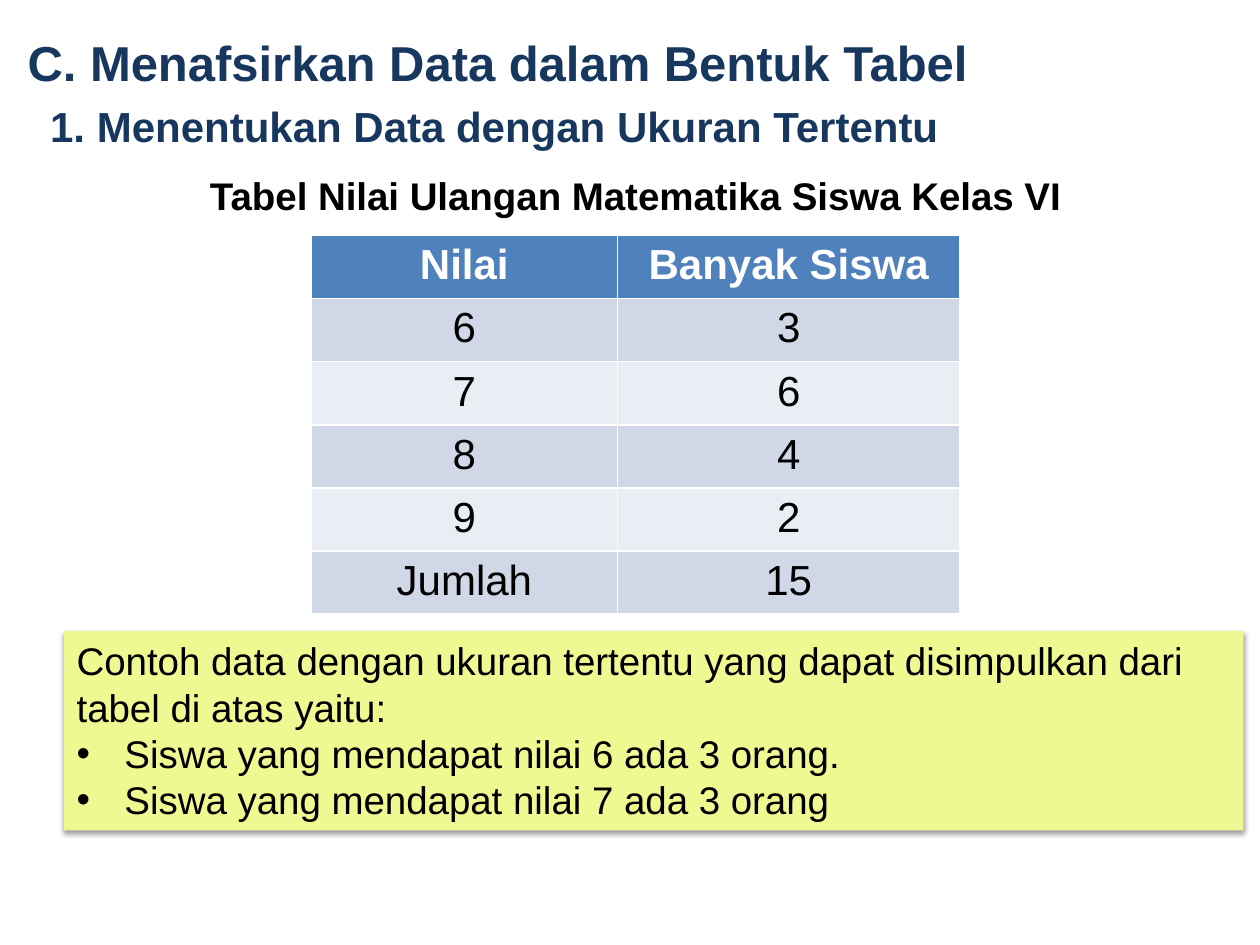
from lxml import etree
from pptx import Presentation
from pptx.dml.color import RGBColor
from pptx.enum.shapes import MSO_SHAPE as Shape
from pptx.enum.text import MSO_ANCHOR as Anchor, MSO_AUTO_SIZE as AutoSize, PP_ALIGN as Align
from pptx.oxml.ns import qn
from pptx.util import Inches, Pt

NAVY, BLACK, WHITE = "17375E", "000000", "FFFFFF"
HEADER, BANDS, LIME = "4F81BD", ("D0D8E8", "E9EDF4"), "EFF991"
SCORES = [
    ("Nilai", "Banyak Siswa"),
    ("6", "3"),
    ("7", "6"),
    ("8", "4"),
    ("9", "2"),
    ("Jumlah", "15"),
]
CONCLUSION = "Contoh data dengan ukuran tertentu yang dapat disimpulkan dari tabel di atas yaitu:"
EXAMPLES = [
    "Siswa yang mendapat nilai 6 ada 3 orang.",
    "Siswa yang mendapat nilai 7 ada 3 orang",
]


def paint(color_format, color):
    color_format.rgb = RGBColor.from_string(color)


def fill_solid(item, color):
    item.fill.solid()
    paint(item.fill.fore_color, color)


def write(paragraph, text, size, color=BLACK, bold=False, align=Align.LEFT):
    paragraph.alignment = align
    run = paragraph.add_run()
    run.text = text
    run.font.name = "Arial"
    run.font.size = Pt(size)
    run.font.bold = bold
    paint(run.font.color, color)


def indent(paragraph, left, first=0):
    properties = paragraph._p.get_or_add_pPr()
    properties.set("marL", str(Inches(left)))
    properties.set("indent", str(Inches(first)))
    return properties


def add_bullet(paragraph):
    properties = indent(paragraph, 0.38, -0.38)
    etree.SubElement(properties, qn("a:buFont"), typeface="Arial")
    etree.SubElement(properties, qn("a:buChar"), char="•")


def add_shadow(shape):
    effects = etree.SubElement(shape._element.spPr, qn("a:effectLst"))
    shadow = etree.SubElement(effects, qn("a:outerShdw"), blurRad=str(Pt(3.1)),
                              dist=str(Pt(1.6)), dir="5400000", rotWithShape="0")
    color = etree.SubElement(shadow, qn("a:srgbClr"), val=BLACK)
    etree.SubElement(color, qn("a:alpha"), val="38000")


def add_heading(slide, box, text, size, left_indent=0, wrap=True):
    frame = slide.shapes.add_textbox(*map(Inches, box)).text_frame
    frame.word_wrap = wrap
    frame.auto_size = AutoSize.SHAPE_TO_FIT_TEXT
    paragraph = frame.paragraphs[0]
    if left_indent:
        indent(paragraph, left_indent)
    write(paragraph, text, size, NAVY, True)


def add_panel(slide, box, color):
    shape = slide.shapes.add_shape(Shape.RECTANGLE, *map(Inches, box))
    fill_solid(shape, color)
    shape.line.fill.background()
    frame = shape.text_frame
    frame.word_wrap = True
    frame.auto_size = AutoSize.SHAPE_TO_FIT_TEXT
    frame.vertical_anchor = Anchor.TOP
    return shape


def add_caption(slide, box, text):
    shape = add_panel(slide, box, WHITE)
    shape.shadow.inherit = False
    write(shape.text_frame.paragraphs[0], text, 22, bold=True, align=Align.CENTER)


def add_conclusion(slide, box):
    shape = add_panel(slide, box, LIME)
    add_shadow(shape)
    frame = shape.text_frame
    write(frame.paragraphs[0], CONCLUSION, 22)
    for example in EXAMPLES:
        paragraph = frame.add_paragraph()
        add_bullet(paragraph)
        write(paragraph, example, 22)


def add_score_table(slide, box):
    table = slide.shapes.add_table(len(SCORES), 2, *map(Inches, box)).table
    for column, width in zip(table.columns, (2.43, 2.72)):
        column.width = Inches(width)
    for row, values in enumerate(SCORES):
        is_header = row == 0
        for column, value in enumerate(values):
            cell = table.cell(row, column)
            fill_solid(cell, HEADER if is_header else BANDS[(row - 1) % 2])
            write(cell.text_frame.paragraphs[0], value, 24,
                  WHITE if is_header else BLACK, is_header, Align.CENTER)


def main():
    presentation = Presentation()
    presentation.slide_width = Inches(10)
    presentation.slide_height = Inches(7.5)
    slide = presentation.slides.add_slide(presentation.slide_layouts[6])
    add_heading(slide, (0.12, 0.21, 8.39, 0.57), "C. Menafsirkan Data dalam Bentuk Tabel", 28)
    add_heading(slide, (0.12, 0.75, 7.5, 0.5), "1. Menentukan Data dengan Ukuran Tertentu",
                24, left_indent=0.18, wrap=False)
    add_caption(slide, (1.14, 1.32, 7.81, 0.47), "Tabel Nilai Ulangan Matematika Siswa Kelas VI")
    add_conclusion(slide, (0.51, 5.01, 9.36, 1.58))
    add_score_table(slide, (2.47, 1.87, 5.15, 3))
    presentation.save("out.pptx")


if __name__ == "__main__":
    main()
